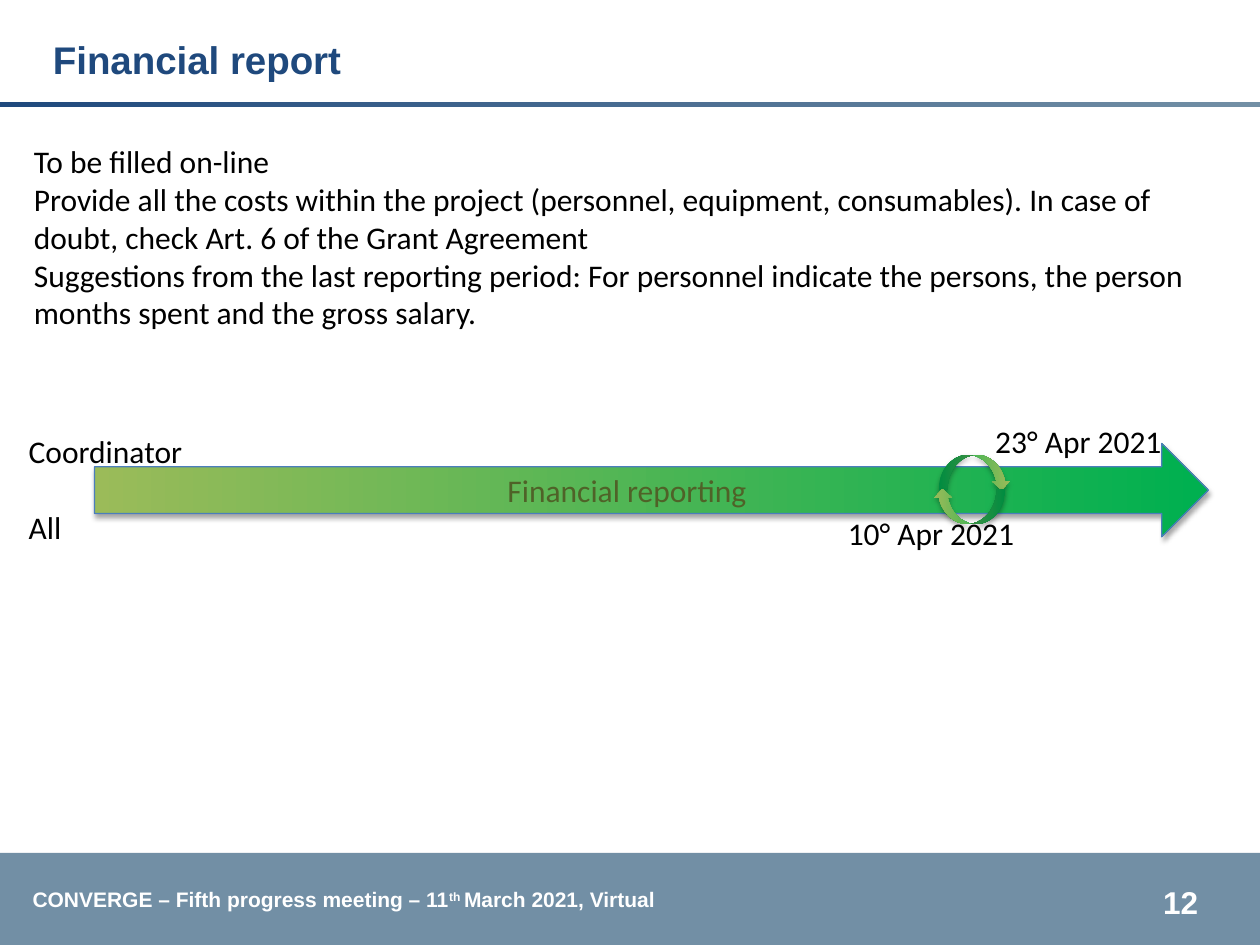
from lxml import etree
from pptx import Presentation
from pptx.dml.color import RGBColor
from pptx.enum.shapes import MSO_SHAPE as Shape
from pptx.enum.text import MSO_ANCHOR as Anchor, PP_ALIGN as Align
from pptx.oxml.ns import qn
from pptx.util import Inches, Pt

WHITE = RGBColor(0xFF, 0xFF, 0xFF)
BLACK = RGBColor(0, 0, 0)
NAVY = RGBColor(0x1F, 0x49, 0x7D)
SLATE = RGBColor(0x72, 0x8F, 0xA5)
LIME = RGBColor(0x9B, 0xBB, 0x59)
GREEN = RGBColor(0, 0xB0, 0x50)
OLIVE = RGBColor(0x4F, 0x62, 0x28)
BLUE = RGBColor(0x4B, 0x7E, 0xBC)

# Content
TITLE = "Financial report"
BODY = [
    "To be filled on-line",
    "Provide all the costs within the project (personnel, equipment, consumables). "
    "In case of doubt, check Art. 6 of the Grant Agreement",
    "Suggestions from the last reporting period: For personnel indicate the persons, "
    "the person months spent and the gross salary.",
]
ROLES = ["Coordinator", "All"]
PHASE = "Financial reporting"
DATES = [("10° Apr 2021", 6.63, 4.03), ("23° Apr 2021", 7.8, 3.3)]
FOOTER = [("CONVERGE – Fifth progress meeting – 11", False), ("th ", True),
          ("March 2021, Virtual", False)]
NUMBER = "12"
CYCLE = [(7.45, 3.61, False), (7.41, 3.88, True)]  # left, top, flipped


def add_run(par, text, size=18, color=BLACK, face="Calibri", bold=False):
    run = par.add_run()
    run.text = text
    font = run.font
    font.size, font.name, font.bold = Pt(size), face, bold
    font.color.rgb = color
    return run


def add_box(box, lines=(), gap=0):
    frame = slide.shapes.add_textbox(*map(Inches, box)).text_frame
    frame.word_wrap = True
    for i, line in enumerate(lines):
        par = frame.add_paragraph() if i else frame.paragraphs[0]
        if i and gap:
            par.space_before = Pt(gap)
        add_run(par, line)
    return frame


def add_form(shapes, kind, box):
    form = shapes.add_shape(kind, *map(Inches, box))
    form.shadow.inherit = False
    form.line.fill.background()
    return form


def blend(form, first, last, angle=0, end=1):
    form.fill.gradient()
    form.fill.gradient_angle = angle
    for stop, color, place in zip(form.fill.gradient_stops, (first, last), (0, end)):
        stop.color.rgb = color
        stop.position = place


def add_shade(form):
    effects = form._element.spPr.find(qn("a:effectLst"))
    outer = etree.SubElement(effects, qn("a:outerShdw"), blurRad=str(Pt(3.1)),
                             dist=str(Pt(1.8)), dir="5400000", rotWithShape="0")
    color = etree.SubElement(outer, qn("a:srgbClr"), val="000000")
    etree.SubElement(color, qn("a:alpha"), val="35000")


prs = Presentation()
prs.slide_width, prs.slide_height = Inches(10), Inches(7.5)
slide = prs.slides.add_slide(prs.slide_layouts[5])

# Footer band, footer text and page number
band = add_form(slide.shapes, Shape.RECTANGLE, (0, 6.77, 10, 0.73))
band.fill.solid()
band.fill.fore_color.rgb = SLATE
foot = add_box((0.16, 6.99, 5.21, 0.3))
foot.word_wrap = False
for text, raised in FOOTER:
    run = add_run(foot.paragraphs[0], text, 12, WHITE, "Arial", True)
    if raised:
        run.font._element.set("baseline", "30000")
page = add_box((9.03, 6.96, 0.68, 0.36))
page.margin_left = page.margin_right = 0
page.paragraphs[0].alignment = Align.CENTER
add_run(page.paragraphs[0], NUMBER, 18, WHITE, "Arial", True)

# Title and rule
rule = add_form(slide.shapes, Shape.RECTANGLE, (0, 0.81, 10, 0.04))
blend(rule, SLATE, NAVY, 180)
title = slide.shapes.title
title.left, title.top, title.width, title.height = map(Inches, (0.32, 0.12, 9.38, 0.58))
title.text_frame.vertical_anchor = Anchor.BOTTOM
head = title.text_frame.paragraphs[0]
head.alignment = Align.LEFT
add_run(head, TITLE, 22, NAVY, "Arial", True)

# Body text
add_box((0.17, 1.08, 9.38, 2.83), BODY)

# Timeline arrow
arrow = add_form(slide.shapes, Shape.RIGHT_ARROW, (0.75, 3.52, 8.84, 0.74))
blend(arrow, LIME, GREEN, end=0.99)
arrow.line.color.rgb = BLUE
arrow.line.width = Pt(0.75)
add_shade(arrow)
label = arrow.text_frame
label.vertical_anchor = Anchor.MIDDLE
label.margin_right = Inches(0.3)
label.paragraphs[0].alignment = Align.CENTER
add_run(label.paragraphs[0], PHASE, color=OLIVE)

# Roles and dates
add_box((0.13, 3.38, 1.97, 1.01), ROLES, gap=22)
for date, left, top in DATES:
    add_box((left, top, 1.58, 0.4), [date])

# Cycle of two curved arrows
cycle = slide.shapes.add_group_shape()
for left, top, flipped in CYCLE:
    curve = add_form(cycle.shapes, Shape.CURVED_DOWN_ARROW, (left, top, 0.57, 0.28))
    blend(curve, GREEN, LIME)
    add_shade(curve)
    if flipped:
        frame = curve._element.spPr.find(qn("a:xfrm"))
        frame.set("flipH", "1")
        frame.set("flipV", "1")

prs.save("out.pptx")
